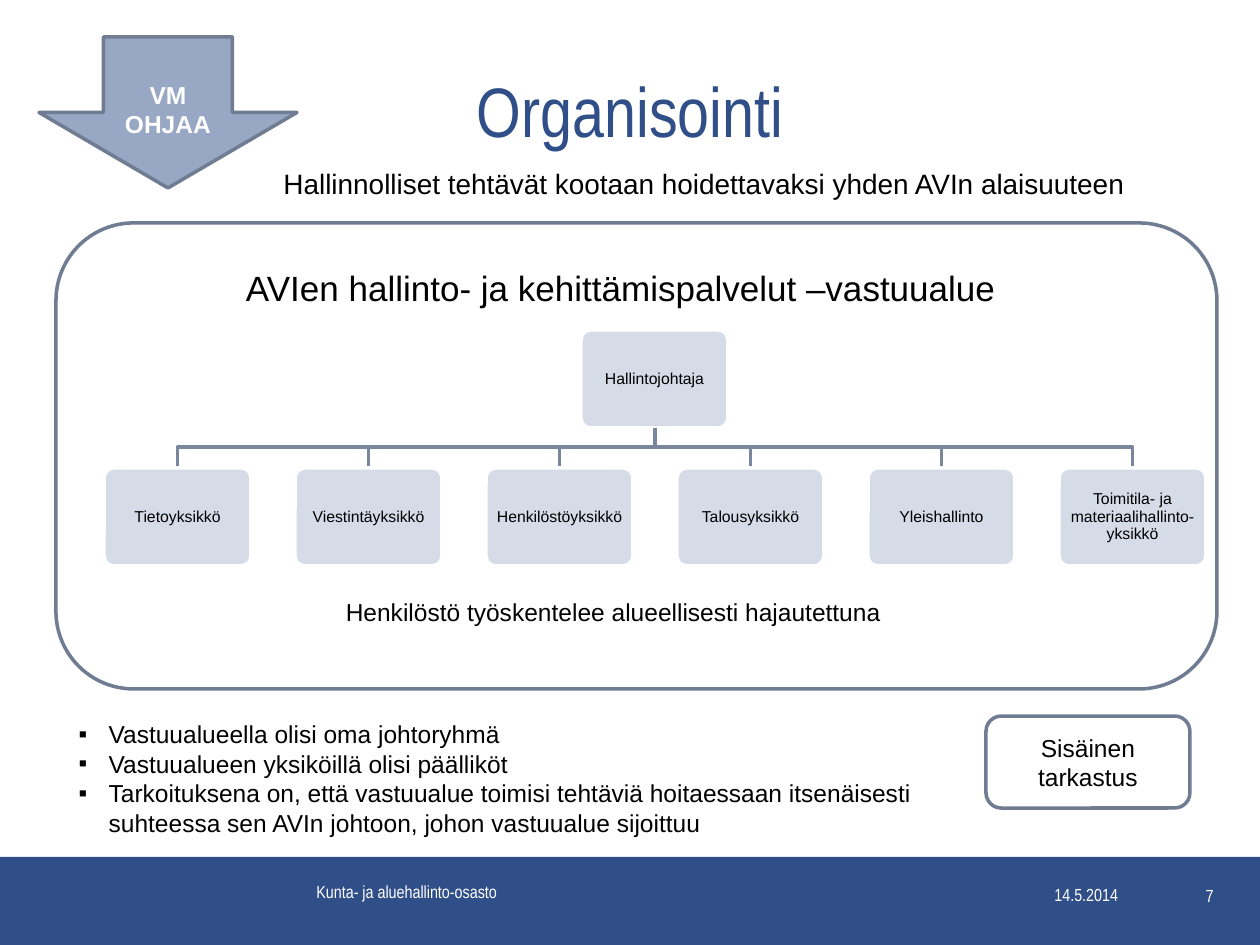
from dataclasses import dataclass

from lxml import etree
from pptx import Presentation
from pptx.dml.color import RGBColor
from pptx.enum.shapes import MSO_SHAPE
from pptx.enum.text import MSO_ANCHOR, MSO_AUTO_SIZE, PP_ALIGN
from pptx.oxml.ns import qn
from pptx.util import Emu, Pt

RECT, ROUND, ARROW = MSO_SHAPE.RECTANGLE, MSO_SHAPE.ROUNDED_RECTANGLE, MSO_SHAPE.DOWN_ARROW
LEFT, CENTER, RIGHT = PP_ALIGN.LEFT, PP_ALIGN.CENTER, PP_ALIGN.RIGHT
TOP, MIDDLE = MSO_ANCHOR.TOP, MSO_ANCHOR.MIDDLE
SANS, NARROW = "Arial", "Arial Narrow"
COLORS = {
    "navy": "304E88",
    "box": "D6DCE7",
    "link": "7A869D",
    "outline": "707C91",
    "arrow": "98A7C4",
    "white": "FFFFFF",
    "black": "000000",
}
EMU_PER_PX = 914400 / 126
BOX_W, BOX_H, BOX_STEP = 147, 98, 191
UNITS_X, UNITS_Y, HEAD_Y = 104, 468, 330
UNITS = [
    "Tietoyksikkö",
    "Viestintäyksikkö",
    "Henkilöstöyksikkö",
    "Talousyksikkö",
    "Yleishallinto",
    "Toimitila- ja materiaalihallinto-yksikkö",
]
BULLETS = [
    "Vastuualueella olisi oma johtoryhmä",
    "Vastuualueen yksiköillä olisi päälliköt",
    "Tarkoituksena on, että vastuualue toimisi tehtäviä hoitaessaan itsenäisesti "
    "suhteessa sen AVIn johtoon, johon vastuualue sijoittuu",
]


@dataclass
class Area:
    x: int
    y: int
    w: int
    h: int


@dataclass
class Style:
    size: int
    color: str = "black"
    font: str = SANS
    bold: bool = False
    align: PP_ALIGN = CENTER
    anchor: MSO_ANCHOR = MIDDLE


@dataclass
class Label:
    text: str
    area: Area
    style: Style


def px(n: float) -> Emu:
    return Emu(round(n * EMU_PER_PX))


def rgb(name: str) -> RGBColor:
    return RGBColor.from_string(COLORS[name])


def place(sp, area: Area) -> None:
    sp.left, sp.top, sp.width, sp.height = map(px, (area.x, area.y, area.w, area.h))


def write(sp, text: str, style: Style) -> None:
    tf = sp.text_frame
    tf.text = text
    tf.word_wrap = True
    tf.auto_size = MSO_AUTO_SIZE.NONE
    tf.vertical_anchor = style.anchor
    for p in tf.paragraphs:
        p.alignment = style.align
        p.space_before = Pt(0)
        for r in p.runs:
            r.font.size = Pt(style.size)
            r.font.name = style.font
            r.font.bold = style.bold
            r.font.color.rgb = rgb(style.color)


def add_label(slide, label: Label) -> None:
    a = label.area
    sp = slide.shapes.add_textbox(px(a.x), px(a.y), px(a.w), px(a.h))
    write(sp, label.text, label.style)


def add_block(slide, kind, area: Area, fill: str = "", line: str = ""):
    sp = slide.shapes.add_shape(kind, px(area.x), px(area.y), px(area.w), px(area.h))
    sp.shadow.inherit = False
    if fill:
        sp.fill.solid()
        sp.fill.fore_color.rgb = rgb(fill)
    else:
        sp.fill.background()
    if line:
        sp.line.color.rgb = rgb(line)
        sp.line.width = Pt(2)
    else:
        sp.line.fill.background()
    return sp


def add_unit(slide, text: str, x: int, y: int) -> None:
    sp = add_block(slide, ROUND, Area(x, y, BOX_W, BOX_H), "box", "white")
    sp.adjustments[0] = 0.1
    write(sp, text, Style(9))
    tf = sp.text_frame
    tf.margin_left = tf.margin_right = px(2)
    tf.margin_top = tf.margin_bottom = px(2)
    tf.paragraphs[0].line_spacing = 0.9


def add_link(slide, x1: float, x2: float) -> None:
    y1 = HEAD_Y + BOX_H
    bend = y1 + 19
    builder = slide.shapes.build_freeform(px(x1), px(y1))
    points = [(x1, bend), (x2, bend), (x2, UNITS_Y)]
    builder.add_line_segments([(px(x), px(y)) for x, y in points], close=False)
    sp = builder.convert_to_shape()
    sp.shadow.inherit = False
    sp.fill.background()
    sp.line.color.rgb = rgb("link")
    sp.line.width = Pt(2)


def add_chart_of_units(slide) -> None:
    head_center = UNITS_X + (BOX_STEP * (len(UNITS) - 1) + BOX_W) / 2
    add_unit(slide, "Hallintojohtaja", int(head_center - BOX_W / 2), HEAD_Y)
    for i, name in enumerate(UNITS):
        x = UNITS_X + i * BOX_STEP
        add_link(slide, head_center, x + BOX_W / 2)
        add_unit(slide, name, x, UNITS_Y)


def fill_list(sp) -> None:
    place(sp, Area(66, 713, 871, 131))
    for p in sp.text_frame.paragraphs:
        p.text = ""
    write(sp, "\n".join(BULLETS), Style(14, align=LEFT, anchor=TOP))
    for p in sp.text_frame.paragraphs:
        pPr = p._p.get_or_add_pPr()
        pPr.set("marL", str(px(30)))
        pPr.set("indent", str(-px(30)))
        etree.SubElement(pPr, qn("a:buFont")).set("typeface", SANS)
        etree.SubElement(pPr, qn("a:buChar")).set("char", "▪")


def main() -> None:
    prs = Presentation()
    prs.slide_width, prs.slide_height = px(1260), px(945)
    slide = prs.slides.add_slide(prs.slide_layouts[1])

    add_block(slide, RECT, Area(0, 857, 1260, 88), "navy")
    add_chart_of_units(slide)
    add_block(slide, ROUND, Area(56, 223, 1161, 466), line="outline")

    title = slide.shapes.title
    place(title, Area(82, 33, 1096, 154))
    write(title, "Organisointi", Style(40, "navy", NARROW))
    fill_list(slide.placeholders[1])

    audit = add_block(slide, ROUND, Area(986, 716, 204, 92), line="outline")
    write(audit, "Sisäinen tarkastus", Style(14))

    arrow = add_block(slide, ARROW, Area(39, 37, 258, 151), "arrow", "outline")
    write(arrow, "VM\nOHJAA", Style(14, "white", bold=True))
    arrow.text_frame.margin_top = px(38)

    footer = Style(10, "white", NARROW, align=LEFT)
    number = Style(10, "white", NARROW, align=RIGHT, anchor=TOP)
    labels = [
        Label("AVIen hallinto- ja kehittämispalvelut –vastuualue",
              Area(116, 260, 1010, 55), Style(20, anchor=TOP)),
        Label("Henkilöstö työskentelee alueellisesti hajautettuna",
              Area(228, 591, 771, 43), Style(14, anchor=TOP)),
        Label("Hallinnolliset tehtävät kootaan hoidettavaksi yhden AVIn alaisuuteen",
              Area(263, 160, 882, 47), Style(16, anchor=TOP)),
        Label("Kunta- ja aluehallinto-osasto", Area(304, 867, 399, 50), footer),
        Label("14.5.2014", Area(1042, 879, 117, 30), footer),
        Label("7", Area(1159, 879, 67, 29), number),
    ]
    for label in labels:
        add_label(slide, label)

    prs.save("out.pptx")


if __name__ == "__main__":
    main()
